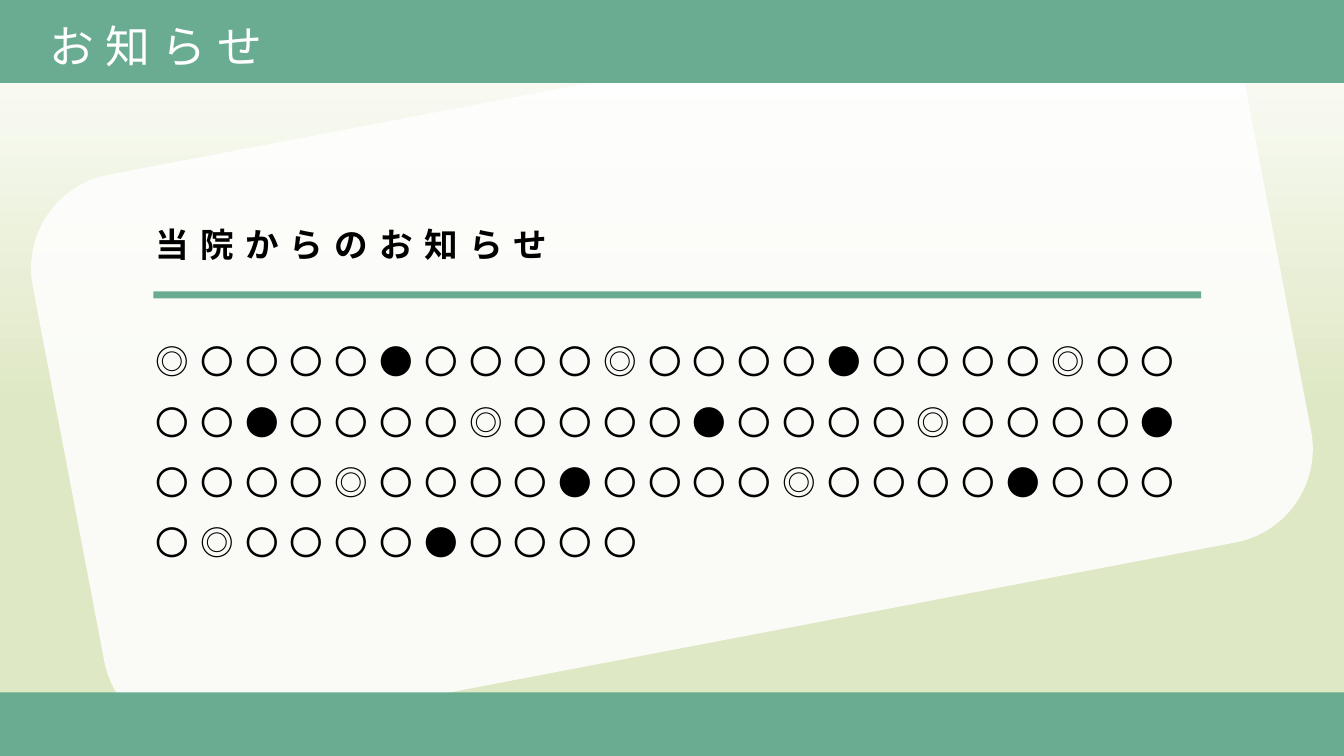
from pptx import Presentation
from pptx import util as u
from pptx.dml.color import RGBColor
from pptx.enum import shapes, text
from pptx.oxml.ns import qn
from lxml import etree

FONT = "Noto Sans CJK JP"
GREEN, WHITE, BLACK = "6AAC91", "FFFFFF", "000000"
BACKGROUND = [(0, WHITE), (0.54, "DFE8C4")]
TITLE = "お知らせ"
HEADING = "当院からのお知らせ"
BODY = "◎〇〇〇〇●〇〇〇〇" * 8
WIDTH, HEIGHT = 25.4, 14.29
HEADER, FOOTER = 1.57, 1.2
BANDS = [
    (2.9, 5.51, 19.8, 0.13),
    (0, HEIGHT - FOOTER, WIDTH, FOOTER),
    (0, 0, WIDTH, HEADER),
]


def color(value):
    """Turn a hex string into a colour."""
    return RGBColor.from_string(value)


def add_box(slide, kind, box, fill):
    """Add a filled shape without line or shadow."""
    shape = slide.shapes.add_shape(kind, *map(u.Cm, box))
    shape.shadow.inherit = False
    shape.fill.solid()
    shape.fill.fore_color.rgb = color(fill)
    shape.line.fill.background()
    return shape


def write(shape, box, content, size, fill, bold=False, spacing=1.0):
    """Place a text shape and write one widely tracked paragraph in it."""
    shape.left, shape.top, shape.width, shape.height = map(u.Cm, box)
    frame = shape.text_frame
    frame.word_wrap = True
    frame.auto_size = text.MSO_AUTO_SIZE.SHAPE_TO_FIT_TEXT
    frame.vertical_anchor = text.MSO_ANCHOR.TOP
    paragraph = frame.paragraphs[0]
    paragraph.alignment = text.PP_ALIGN.LEFT
    paragraph.line_spacing = spacing
    run = paragraph.add_run()
    run.text = content
    run.font.size = u.Pt(size)
    run.font.bold = bold
    run.font.color.rgb = color(fill)
    run.font.name = FONT
    properties = run.font._element
    properties.set("spc", "600")
    properties.set("lang", "ja-JP")
    etree.SubElement(properties, qn("a:ea"), typeface=FONT)


def main():
    """Build the notice slide."""
    presentation = Presentation()
    presentation.slide_width = u.Cm(WIDTH)
    presentation.slide_height = u.Cm(HEIGHT)
    slide = presentation.slides.add_slide(presentation.slide_layouts[5])

    background = slide.background.fill
    background.gradient()
    background.gradient_angle = 270
    for stop, (position, value) in zip(background.gradient_stops, BACKGROUND):
        stop.position = position
        stop.color.rgb = color(value)

    card = add_box(slide, shapes.MSO_SHAPE.ROUNDED_RECTANGLE,
                   (1.09, 1.37, 23.22, 10.82), WHITE)
    card.rotation = 349.2
    tint = card.fill._xPr.find(qn("a:solidFill"))[0]
    etree.SubElement(tint, qn("a:alpha"), val="85000")

    body = slide.shapes.add_textbox(0, 0, 0, 0)
    write(body, (2.69, 5.94, 20.09, 4.78), BODY, 18, BLACK, spacing=1.5)
    heading = slide.shapes.add_textbox(0, 0, 0, 0)
    write(heading, (2.69, 4.11, 10.59, 1.02), HEADING, 18, BLACK, bold=True)
    for band in BANDS:
        add_box(slide, shapes.MSO_SHAPE.RECTANGLE, band, GREEN)

    title = slide.shapes.title
    write(title, (0.69, 0.23, 21.82, 1.27), TITLE, 24, WHITE)
    slide.shapes._spTree.append(title._element)
    presentation.save("out.pptx")


if __name__ == "__main__":
    main()
